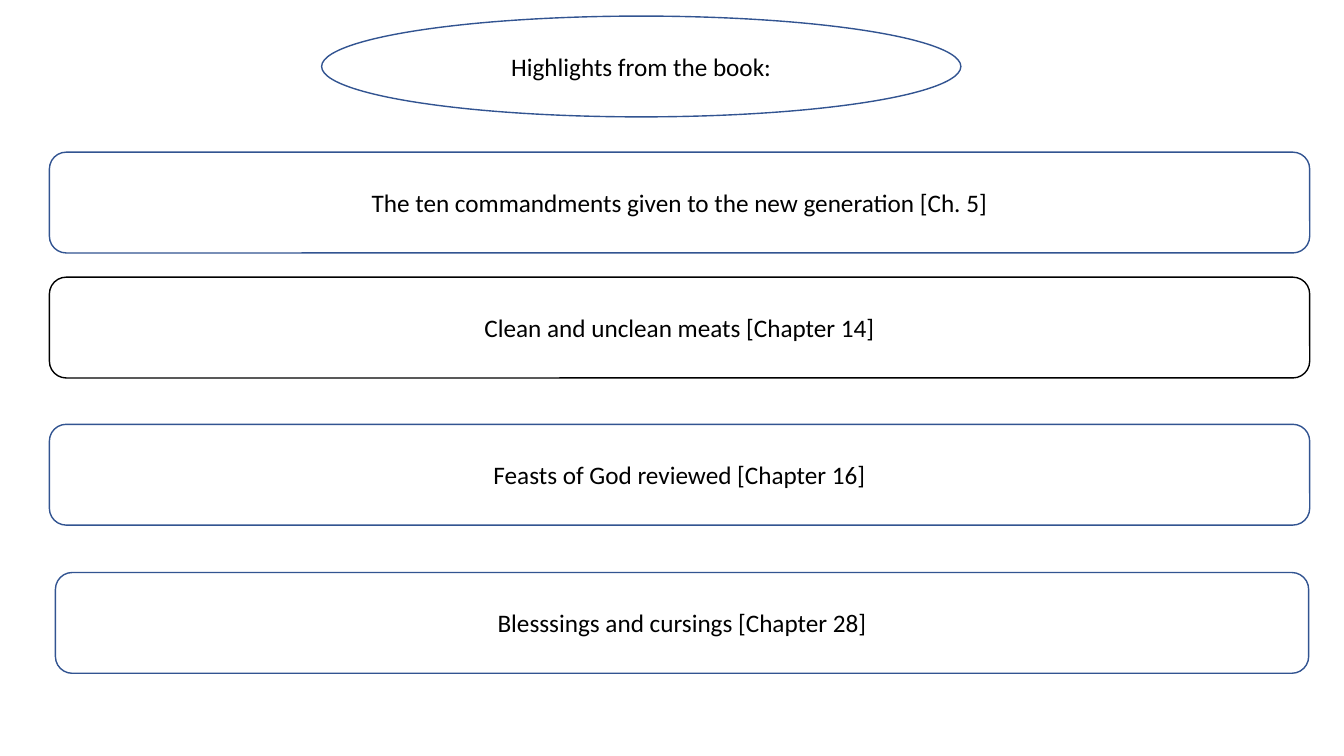
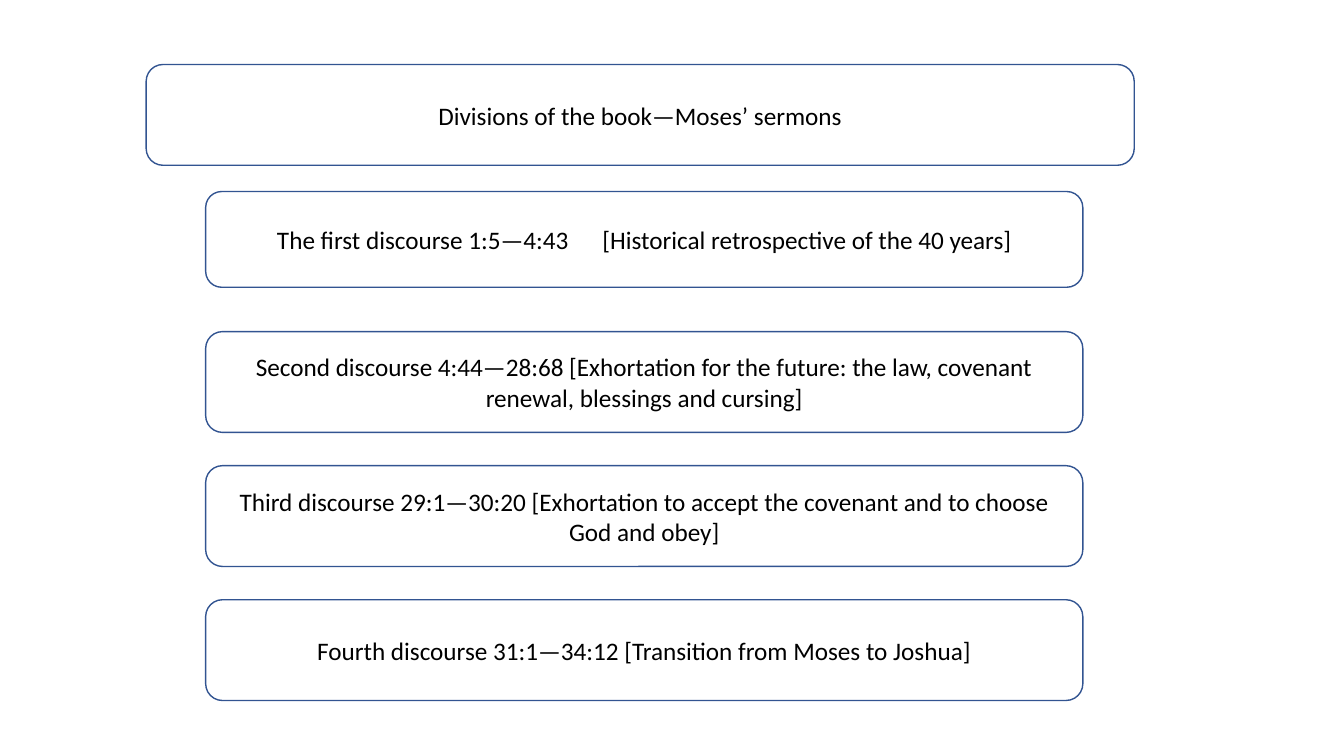
from dataclasses import dataclass

from pptx import Presentation
from pptx.dml.color import RGBColor
from pptx.enum.shapes import MSO_SHAPE as Shape
from pptx.enum.text import MSO_ANCHOR as Anchor, PP_ALIGN as Align
from pptx.util import Emu, Pt

EMU_PER_PX = 9144
TITLE_ONLY = 5


@dataclass(frozen=True)
class Theme:
    """Colours, type and line weight shared by the slides."""
    paper: RGBColor = RGBColor(0xFF, 0xFF, 0xFF)
    ink: RGBColor = RGBColor(0, 0, 0)
    outline: RGBColor = RGBColor(0x32, 0x54, 0x91)
    font: str = "Calibri"
    text_size: int = 18
    line_width: int = 1
    wide_gap: int = 20


THEME = Theme()


def px(*lengths):
    """Turn pixel lengths into EMU."""
    return [Emu(length * EMU_PER_PX) for length in lengths]


def add_span(para, text, spacing=0):
    """Add one styled run, with optional letter spacing in points."""
    span = para.add_run()
    span.text = text
    span.font.name = THEME.font
    span.font.size = Pt(THEME.text_size)
    span.font.color.rgb = THEME.ink
    if spacing:
        span._r.get_or_add_rPr().set("spc", str(spacing * 100))


def write_centred(box, parts):
    """Write centred text, with a wide gap between its parts."""
    frame = box.text_frame
    frame.word_wrap = True
    frame.vertical_anchor = Anchor.MIDDLE
    para = frame.paragraphs[0]
    para.alignment = Align.CENTER
    for index, part in enumerate(parts):
        if index:
            add_span(para, " ", THEME.wide_gap)
        add_span(para, part)


def add_frame(page, kind, bounds, outline=THEME.outline):
    """Add an outlined, unfilled shape."""
    box = page.shapes.add_shape(kind, *px(*bounds))
    box.shadow.inherit = False
    box.fill.background()
    box.line.color.rgb = outline
    box.line.width = Pt(THEME.line_width)
    return box


def add_card(page, bounds, *parts, outline=THEME.outline):
    """Add a rounded white card with text."""
    card = add_frame(page, Shape.ROUNDED_RECTANGLE, bounds, outline)
    card.fill.solid()
    card.fill.fore_color.rgb = THEME.paper
    write_centred(card, parts)


def add_titled_page(deck, kind, bounds, text):
    """Add a slide whose title sits in an outlined shape."""
    page = deck.slides.add_slide(deck.slide_layouts[TITLE_ONLY])
    page.background.fill.solid()
    page.background.fill.fore_color.rgb = THEME.paper
    title = page.shapes.title
    title.left, title.top, title.width, title.height = px(*bounds)
    write_centred(title, [text])
    add_frame(page, kind, bounds)
    return page


def add_highlights(deck):
    """Build the slide of highlights."""
    page = add_titled_page(deck, Shape.OVAL, (319, 16, 634, 100),
                           "Highlights from the book:")
    add_card(page, (49, 151, 1250, 100),
             "The ten commandments given to the new generation [Ch. 5]")
    add_card(page, (49, 275, 1250, 100),
             "Clean and unclean meats [Chapter 14]", outline=THEME.ink)
    add_card(page, (49, 421, 1250, 100), "Feasts of God reviewed [Chapter 16]")
    add_card(page, (55, 568, 1243, 100), "Blesssings and cursings [Chapter 28]")


def add_divisions(deck):
    """Build the slide of the four discourses."""
    page = add_titled_page(deck, Shape.ROUNDED_RECTANGLE, (145, 64, 980, 100),
                           "Divisions of the book—Moses’ sermons")
    left, width, top, step = 204, 870, 329, 133
    add_card(page, (left, 190, width, 95), "The first discourse 1:5—4:43",
             "[Historical retrospective of the 40 years]")
    later_discourses = (
        "Second discourse 4:44—28:68 [Exhortation for the future: "
        "the law, covenant renewal, blessings and cursing]",
        "Third discourse 29:1—30:20 [Exhortation to accept the covenant "
        "and to choose God and obey]",
        "Fourth discourse 31:1—34:12 [Transition from Moses to Joshua]",
    )
    for row, text in enumerate(later_discourses):
        add_card(page, (left, top + row * step, width, 100), text)


def main():
    """Build and save the deck."""
    deck = Presentation()
    deck.slide_width, deck.slide_height = px(1333, 750)
    add_highlights(deck)
    add_divisions(deck)
    deck.save("out.pptx")


if __name__ == "__main__":
    main()
